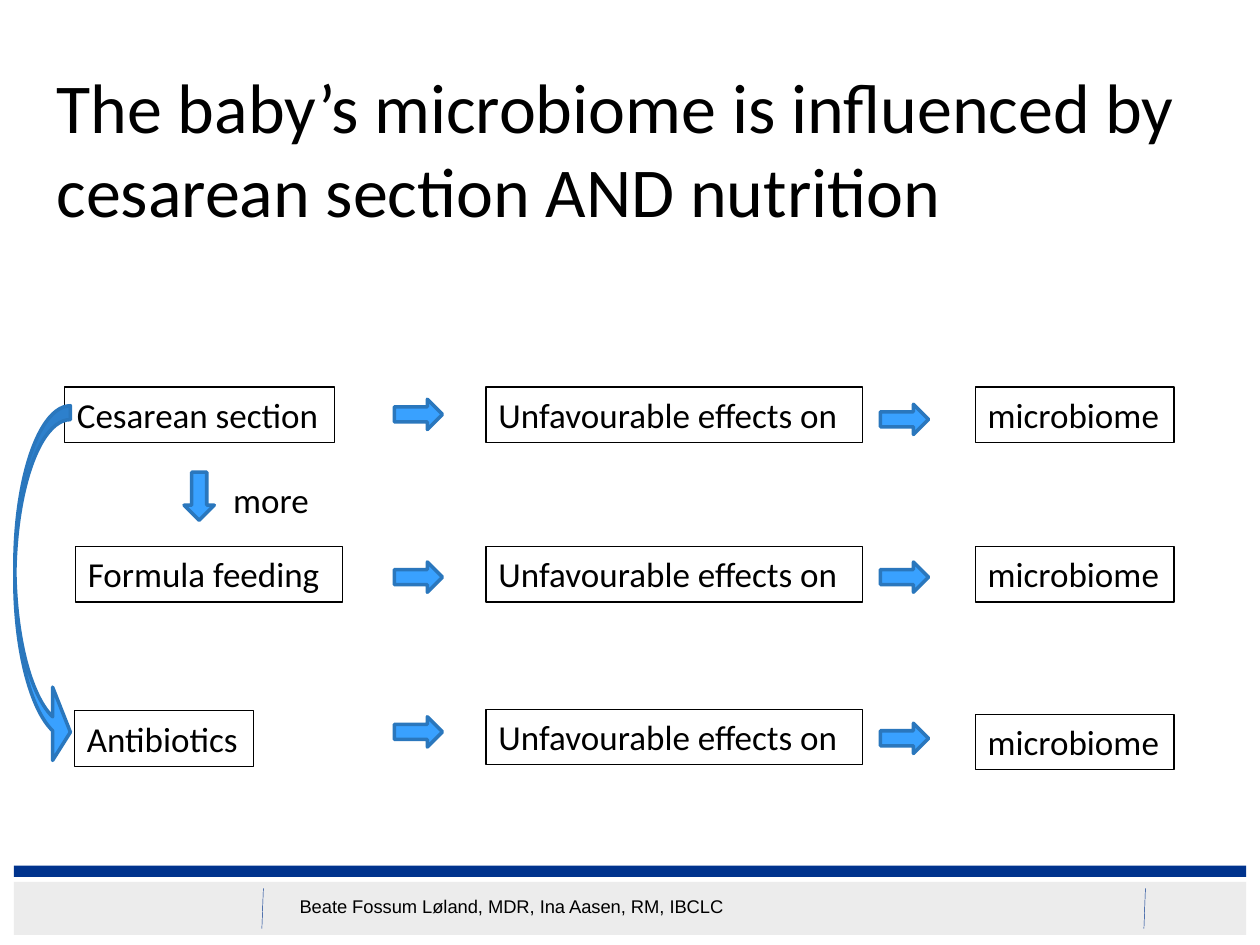
"""Build the slide on what shapes the baby's microbiome."""
from lxml.etree import SubElement
from pptx import Presentation
from pptx.dml.color import RGBColor as Rgb
from pptx.enum.shapes import MSO_CONNECTOR as Link, MSO_SHAPE as Kind
from pptx.enum.text import MSO_ANCHOR as Anchor, PP_ALIGN as Align
from pptx.oxml.ns import qn
from pptx.util import Cm, Pt

TITLE = "The baby’s microbiome is influenced by cesarean section AND nutrition"
FOOTER = "Beate Fossum Løland, MDR, Ina Aasen, RM, IBCLC"
EFFECT, TARGET = "Unfavourable effects on", "microbiome"
BLACK, NAVY, GREY = "000000", "00338D", "ECECEC"
BLUE, EDGE = "39A1FF", "2A77BD"
TALL = 1.12
ARROW = (0.97, 0.61)
EFFECT_X, TARGET_X, ARROW_X = 9.8, 19.66, (7.95, 17.75)

ROWS = [
    {"cause": "Cesarean section", "x": 1.3, "wide": 5.44,
     "tops": (7.8, 7.8, 7.8), "arrows": (8.05, 8.15)},
    {"cause": "Formula feeding", "x": 1.52, "wide": 5.38,
     "tops": (11.02, 11.02, 11.02), "arrows": (11.33, 11.33)},
    {"cause": "Antibiotics", "x": 1.5, "wide": 3.61,
     "tops": (14.33, 14.3, 14.4), "arrows": (14.45, 14.58)},
]
BARS = [(17.78, 1.07, GREY), (17.45, 0.23, NAVY)]
RULES = [5.31, 23.09]


def color(code):
    return Rgb.from_string(code)


def draw(slide, kind, area, fill=None, line=None, width=0.75):
    shape = slide.shapes.add_shape(kind, *map(Cm, area))
    shape.shadow.inherit = False
    if fill:
        shape.fill.solid()
        shape.fill.fore_color.rgb = color(fill)
    else:
        shape.fill.background()
    if line:
        shape.line.color.rgb = color(line)
        shape.line.width = Pt(width)
    else:
        shape.line.fill.background()
    return shape


def write(shape, text, size=20, font="Calibri"):
    frame = shape.text_frame
    frame.text = text
    frame.word_wrap = True
    frame.vertical_anchor = Anchor.TOP
    frame.margin_left, frame.margin_right = Cm(0.25), 0
    par = frame.paragraphs[0]
    par.alignment = Align.LEFT
    par.font.size, par.font.name = Pt(size), font
    par.font.color.rgb = color(BLACK)
    return frame


def label(slide, area, text, size=20, font="Calibri"):
    box = slide.shapes.add_textbox(*map(Cm, area))
    return write(box, text, size, font)


def arrow(slide, x, y):
    return draw(slide, Kind.RIGHT_ARROW, (x, y, *ARROW), BLUE, EDGE, 2)


def frame_slide(slide):
    for top, tall, fill in BARS:
        draw(slide, Kind.RECTANGLE, (0.28, top, 24.84, tall), fill)
    for x in RULES:
        ends = map(Cm, (x, 17.91, x - 0.03, 18.72))
        rule = slide.shapes.add_connector(Link.STRAIGHT, *ends)
        rule.line.color.rgb = color(NAVY)
        rule.line.width = Pt(0.25)
        SubElement(rule.element.spPr, qn("a:effectLst"))
    title = label(slide, (0.89, 2.13, 23.6, 3.18), TITLE, 40)
    title.vertical_anchor = Anchor.BOTTOM
    title.margin_bottom = Cm(0.64)
    label(slide, (5.79, 17.93, 9.42, 0.71), FOOTER, 10.5, "Arial")


def chain(slide, row):
    cells = [(row["cause"], row["x"], row["wide"]),
             (EFFECT, EFFECT_X, 7.59), (TARGET, TARGET_X, 4.01)]
    for (text, x, wide), y in zip(cells, row["tops"]):
        box = draw(slide, Kind.RECTANGLE, (x, y, wide, TALL), line=BLACK)
        write(box, text)
    for x, y in zip(ARROW_X, row["arrows"]):
        arrow(slide, x, y)


def main():
    deck = Presentation()
    deck.slide_width, deck.slide_height = Cm(25.4), Cm(19.05)
    slide = deck.slides.add_slide(deck.slide_layouts[6])
    frame_slide(slide)
    for row in ROWS:
        chain(slide, row)
    arrow(slide, 3.53, 9.7).rotation = 90
    label(slide, (4.45, 9.53, 2.06, TALL), "more")
    loop = draw(slide, Kind.CURVED_RIGHT_ARROW, (0.3, 8.18, 1.12, 7.32),
                BLUE, EDGE, 2)
    for spot, value in enumerate((0.25, 1.32, 0.32)):
        loop.adjustments[spot] = value
    deck.save("out.pptx")


if __name__ == "__main__":
    main()
